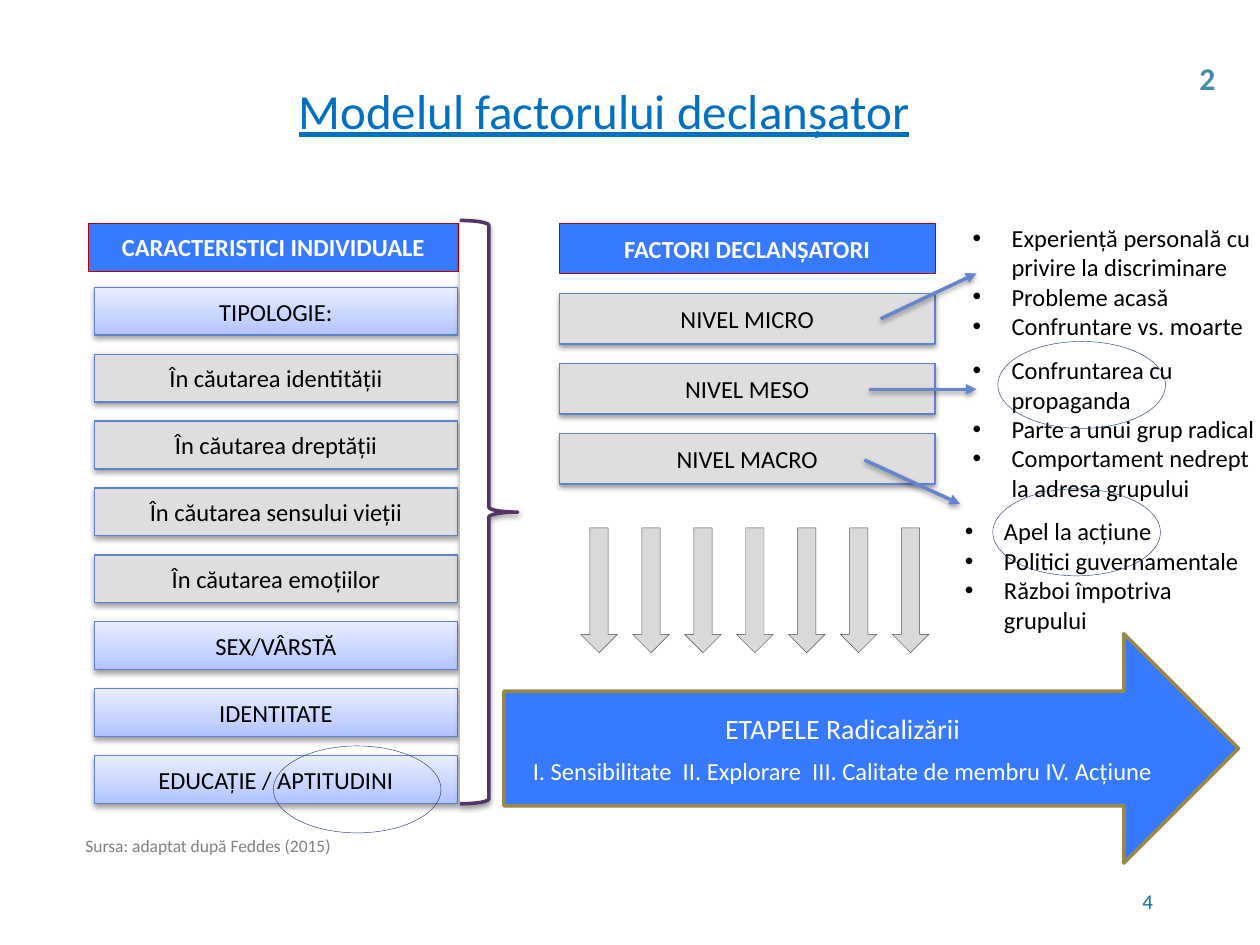
from copy import deepcopy
from dataclasses import dataclass

from lxml import etree
from pptx import Presentation
from pptx.dml.color import RGBColor
from pptx.enum.shapes import MSO_CONNECTOR, MSO_SHAPE
from pptx.enum.text import MSO_ANCHOR, MSO_AUTO_SIZE, PP_ALIGN
from pptx.oxml.ns import qn
from pptx.util import Inches, Pt

RECT, OVAL, BRACE = MSO_SHAPE.RECTANGLE, MSO_SHAPE.OVAL, MSO_SHAPE.RIGHT_BRACE
ARROW_RIGHT, ARROW_DOWN = MSO_SHAPE.RIGHT_ARROW, MSO_SHAPE.DOWN_ARROW
STRAIGHT = MSO_CONNECTOR.STRAIGHT
LEFT, CENTER, RIGHT = PP_ALIGN.LEFT, PP_ALIGN.CENTER, PP_ALIGN.RIGHT
TOP, MIDDLE = MSO_ANCHOR.TOP, MSO_ANCHOR.MIDDLE
NO_FIT = MSO_AUTO_SIZE.NONE

COLS, ROWS = 100, 75  # grid cells across and down the slide
BLUE, GREY, BOX_LINE, HEAD_LINE = "377AFF", "DEDEDE", "6081CD", "C00000"
GRADIENT = ((0, "B0C2FF"), (0.35, "C6D3FF"), (1, "E9EEFF"))


@dataclass
class Area:
    """A block of grid cells."""
    col: float
    row: float
    cols: float
    rows: float


@dataclass
class Look:
    fill: str | tuple | None
    line: str
    weight: float
    shadow: bool = False


@dataclass
class Type:
    size: float
    color: str
    bold: bool = False
    underline: bool = False


@dataclass
class Column:
    """A header with evenly spaced boxes below it."""
    header: str
    header_area: Area
    first: Area
    pitch: float
    boxes: list[tuple[str, Look]]


HEADER = Look(BLUE, HEAD_LINE, 0.25)
PLAIN = Look(GREY, BOX_LINE, 0.75, True)
SHADED = Look(GRADIENT, BOX_LINE, 0.75, True)
ARROW = Look(BLUE, "98894B", 2)
SMALL_ARROW = Look("D9D9D9", "505050", 0.25)
BRACKET = Look("FFFFFF", "543466", 2, True)
RING = Look(None, "253D75", 0.25)
BODY, HEADING = Type(14, "000000"), Type(14, "FFFFFF", bold=True)

COLUMNS = [
    Column("CARACTERISTICI INDIVIDUALE", Area(7, 17.7, 29.4, 3.8),
           Area(7.5, 22.8, 28.8, 3.8), 5.31, [
        ("TIPOLOGIE:", SHADED),
        ("În căutarea identității", PLAIN),
        ("În căutarea dreptății", PLAIN),
        ("În căutarea sensului vieții", PLAIN),
        ("În căutarea emoțiilor", PLAIN),
        ("SEX/VÂRSTĂ", SHADED),
        ("IDENTITATE", SHADED),
        ("EDUCAȚIE / APTITUDINI", SHADED)]),
    Column("FACTORI DECLANȘATORI", Area(44.4, 17.7, 29.8, 4),
           Area(44.4, 23.3, 29.8, 4), 5.56, [
        ("NIVEL MICRO", PLAIN), ("NIVEL MESO", PLAIN), ("NIVEL MACRO", PLAIN)]),
]
FACTORS = [
    (Area(76.2, 17.2, 24.9, 10.4), [
        "Experiență personală cu privire la discriminare",
        "Probleme acasă", "Confruntare vs. moarte"]),
    (Area(76.2, 27.7, 24.9, 12.8), [
        "Confruntarea cu propaganda", "Parte a unui grup radical",
        "Comportament nedrept la adresa grupului"]),
    (Area(75.6, 40.5, 24.9, 10.4), [
        "Apel la acțiune", "Politici guvernamentale",
        "Război împotriva grupului"]),
]
POINTERS = [(69.9, 25.3, 77.5, 21.7), (69, 30.9, 77.5, 30.9), (68.6, 36.5, 76.2, 40)]
RINGS = [(21.7, 59.2), (78.8, 38.8), (79.2, 27.1)]

prs = Presentation()
prs.slide_width, prs.slide_height = Inches(10), Inches(7.5)
s = prs.slides.add_slide(prs.slide_layouts[5])


def x(col: float) -> int:
    return round(prs.slide_width * col / COLS)


def y(row: float) -> int:
    return round(prs.slide_height * row / ROWS)


def box(a: Area) -> tuple[int, int, int, int]:
    return x(a.col), y(a.row), x(a.cols), y(a.rows)


def rgb(color: str) -> RGBColor:
    return RGBColor.from_string(color)


def child(parent, tag: str, **attrs):
    return etree.SubElement(parent, qn(tag), attrs)


def add_shadow(effects) -> None:
    shadow = child(effects, "a:outerShdw", blurRad=str(Pt(3.1)), dist=str(Pt(1.6)),
                   dir="5400000", rotWithShape="0")
    child(child(shadow, "a:srgbClr", val="000000"), "a:alpha", val="38000")


def write(sp, lines: list[str], types: list[Type], align=LEFT, anchor=TOP,
          wrap=True, bullets=False, gap: float = 0) -> None:
    tf = sp.text_frame
    frame = {"word_wrap": wrap, "auto_size": NO_FIT, "vertical_anchor": anchor}
    for name, value in frame.items():
        setattr(tf, name, value)
    tf.text = "\n".join(lines)
    for p, kind in zip(tf.paragraphs, types):
        p.alignment = align
        if gap and p is not tf.paragraphs[-1]:
            p.space_after = Pt(gap)
        if bullets:
            pPr = p._p.get_or_add_pPr()
            pPr.set("marL", str(Inches(0.31)))
            pPr.set("indent", str(-Inches(0.31)))
            child(pPr, "a:buFont", typeface="Arial")
            child(pPr, "a:buChar", char="•")
        font = p.runs[0].font
        style = {"name": "Calibri", "size": Pt(kind.size),
                 "bold": kind.bold, "underline": kind.underline}
        for name, value in style.items():
            setattr(font, name, value)
        font.color.rgb = rgb(kind.color)


def add_text(a: Area, lines: list[str], kind: Type, **options) -> None:
    write(s.shapes.add_textbox(*box(a)), lines, [kind] * len(lines), **options)


def add_shape(preset, a: Area, look: Look):
    sp = s.shapes.add_shape(preset, *box(a))
    if look.fill is None:
        sp.fill.background()
    elif isinstance(look.fill, str):
        sp.fill.solid()
        sp.fill.fore_color.rgb = rgb(look.fill)
    else:
        sp.fill.gradient()
        sp.fill.gradient_angle = 90
        stops = sp._element.spPr.find(".//" + qn("a:gsLst"))
        stops.insert(1, deepcopy(stops[0]))
        for stop, (position, color) in zip(sp.fill.gradient_stops, look.fill):
            stop.position = position
            stop.color.rgb = rgb(color)
    sp.line.color.rgb = rgb(look.line)
    sp.line.width = Pt(look.weight)
    sp.shadow.inherit = False
    if look.shadow:
        add_shadow(sp._element.spPr.find(qn("a:effectLst")))
    return sp


def add_pointer(x1: float, y1: float, x2: float, y2: float) -> None:
    line = s.shapes.add_connector(STRAIGHT, x(x1), y(y1), x(x2), y(y2))
    line.line.color.rgb = rgb("6585CF")
    line.line.width = Pt(2)
    child(line.line._get_or_add_ln(), "a:tailEnd", type="triangle")
    add_shadow(child(line._element.spPr, "a:effectLst"))


def add_column(c: Column) -> None:
    write(add_shape(RECT, c.header_area, HEADER), [c.header], [HEADING], CENTER, MIDDLE)
    for i, (label, look) in enumerate(c.boxes):
        a = Area(c.first.col, c.first.row + i * c.pitch, c.first.cols, c.first.rows)
        write(add_shape(RECT, a, look), [label], [BODY], CENTER, MIDDLE)


title = s.shapes.title
title.left, title.top, title.width, title.height = box(Area(22.7, 5.9, 51, 5.7))
write(title, ["Modelul factorului declanșator"],
      [Type(28, "0070C0", underline=True)], wrap=False)
add_text(Area(71.7, 69.5, 20.8, 4), ["4"], Type(12, "0770B1"), align=RIGHT, anchor=MIDDLE)
add_text(Area(94.2, 4.2, 3.3, 4), ["2"], Type(18, "3E8EA9", bold=True), wrap=False)
add_text(Area(5.8, 65.8, 22.8, 2.7), ["Sursa: adaptat după Feddes (2015)"],
         Type(10, "808080"))

for column in COLUMNS:
    add_column(column)
stages = add_shape(ARROW_RIGHT, Area(40, 50.3, 58.3, 18.2), ARROW)
write(stages, ["ETAPELE Radicalizării",
               "I. Sensibilitate  II. Explorare  III. Calitate de membru IV. Acțiune"],
      [Type(16, "FFFFFF"), Type(14, "FFFFFF")], CENTER, MIDDLE, gap=6)
add_shape(BRACE, Area(36.5, 17.5, 4.6, 46.3), BRACKET)
for i in range(7):
    add_shape(ARROW_DOWN, Area(46.1 + i * 4.12, 41.9, 2.9, 9.9), SMALL_ARROW)
for area, items in FACTORS:
    add_text(area, items, BODY, bullets=True)
for ends in POINTERS:
    add_pointer(*ends)
for col, row in RINGS:
    add_shape(OVAL, Area(col, row, 13.3, 6.9), RING)

prs.save("out.pptx")
